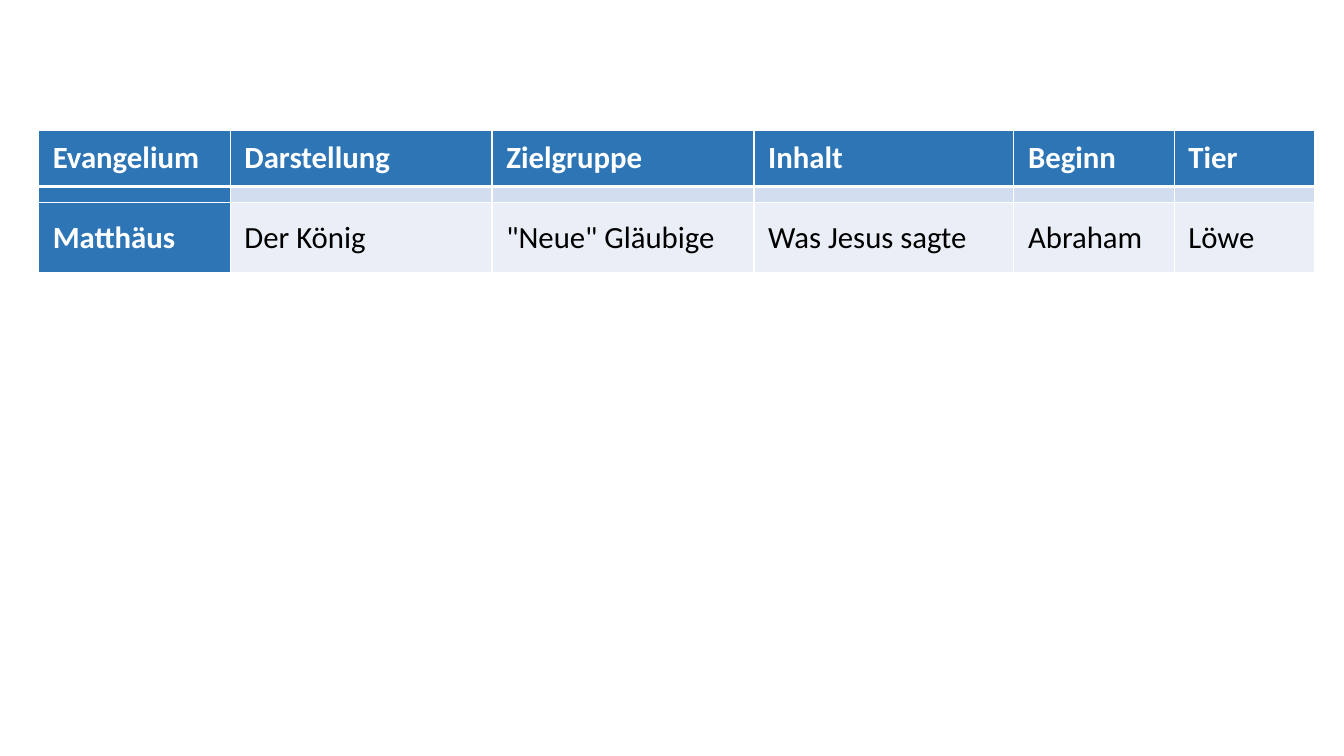
from dataclasses import dataclass

from lxml.etree import SubElement
from pptx import Presentation
from pptx.dml.color import RGBColor
from pptx.enum.text import MSO_ANCHOR as Anchor, PP_ALIGN as Align
from pptx.oxml.ns import qn
from pptx.util import Cm, Pt


@dataclass(frozen=True)
class Theme:
    font: str = "Calibri"
    text_size: int = 22
    spacer_size: int = 1
    accent: str = "2E75B6"
    band_dark: str = "D2DEEF"
    band_light: str = "EAEFF7"
    white: str = "FFFFFF"
    black: str = "000000"
    thin_line: int = 1
    thick_line: int = 3


class SlideBuilder:
    def __init__(self, slide, theme):
        self.slide = slide
        self.theme = theme

    def add_table(self, left, top, widths, heights, rows):
        frame = self.slide.shapes.add_table(
            len(rows), len(widths), Cm(left), Cm(top),
            Cm(sum(widths)), Cm(sum(heights)))
        table = frame.table
        for column, width in zip(table.columns, widths):
            column.width = Cm(width)
        for row, height in zip(table.rows, heights):
            row.height = Cm(height)
        for row_index, texts in enumerate(rows):
            for column_index, text in enumerate(texts):
                cell = table.cell(row_index, column_index)
                self.style_cell(cell, row_index, column_index)
                self.write_cell(cell, text, row_index, column_index)

    def style_cell(self, cell, row_index, column_index):
        theme = self.theme
        cell.margin_left = cell.margin_right = Cm(0.36)
        cell.margin_top = cell.margin_bottom = 0
        cell.vertical_anchor = Anchor.MIDDLE
        header_side = {0: "lnB", 1: "lnT"}.get(row_index)
        for side in ("lnL", "lnR", "lnT", "lnB"):
            width = theme.thick_line if side == header_side else theme.thin_line
            self.add_border(cell, side, width)
        if row_index == 0 or column_index == 0:
            color = theme.accent
        else:
            color = theme.band_dark if row_index % 2 else theme.band_light
        cell.fill.solid()
        cell.fill.fore_color.rgb = RGBColor.from_string(color)

    def add_border(self, cell, side, width):
        properties = cell._tc.get_or_add_tcPr()
        line = SubElement(properties, qn(f"a:{side}"), w=str(Pt(width)))
        fill = SubElement(line, qn("a:solidFill"))
        SubElement(fill, qn("a:srgbClr"), val=self.theme.white)

    def write_cell(self, cell, text, row_index, column_index):
        theme = self.theme
        paragraph = cell.text_frame.paragraphs[0]
        if not text:
            SubElement(paragraph._p, qn("a:endParaRPr"),
                       sz=str(theme.spacer_size * 100))
            return
        heading = row_index == 0 or column_index == 0
        paragraph.alignment = Align.JUSTIFY if row_index == 0 else Align.LEFT
        run = paragraph.add_run()
        run.text = text
        run.font.name = theme.font
        run.font.size = Pt(theme.text_size)
        run.font.bold = heading
        run.font.color.rgb = RGBColor.from_string(
            theme.white if heading else theme.black)


def main():
    presentation = Presentation()
    presentation.slide_width = Cm(33.87)
    presentation.slide_height = Cm(19.05)
    slide = presentation.slides.add_slide(presentation.slide_layouts[6])
    builder = SlideBuilder(slide, Theme())
    headings = ["Evangelium", "Darstellung", "Zielgruppe", "Inhalt", "Beginn", "Tier"]
    matthew = ["Matthäus", "Der König", '"Neue" Gläubige', "Was Jesus sagte",
               "Abraham", "Löwe"]
    builder.add_table(
        left=0.97, top=3.28,
        widths=[4.83, 6.6, 6.6, 6.55, 4.04, 3.53],
        heights=[1.42, 0.41, 1.75],
        rows=[headings, [""] * len(headings), matthew])
    presentation.save("out.pptx")


if __name__ == "__main__":
    main()
